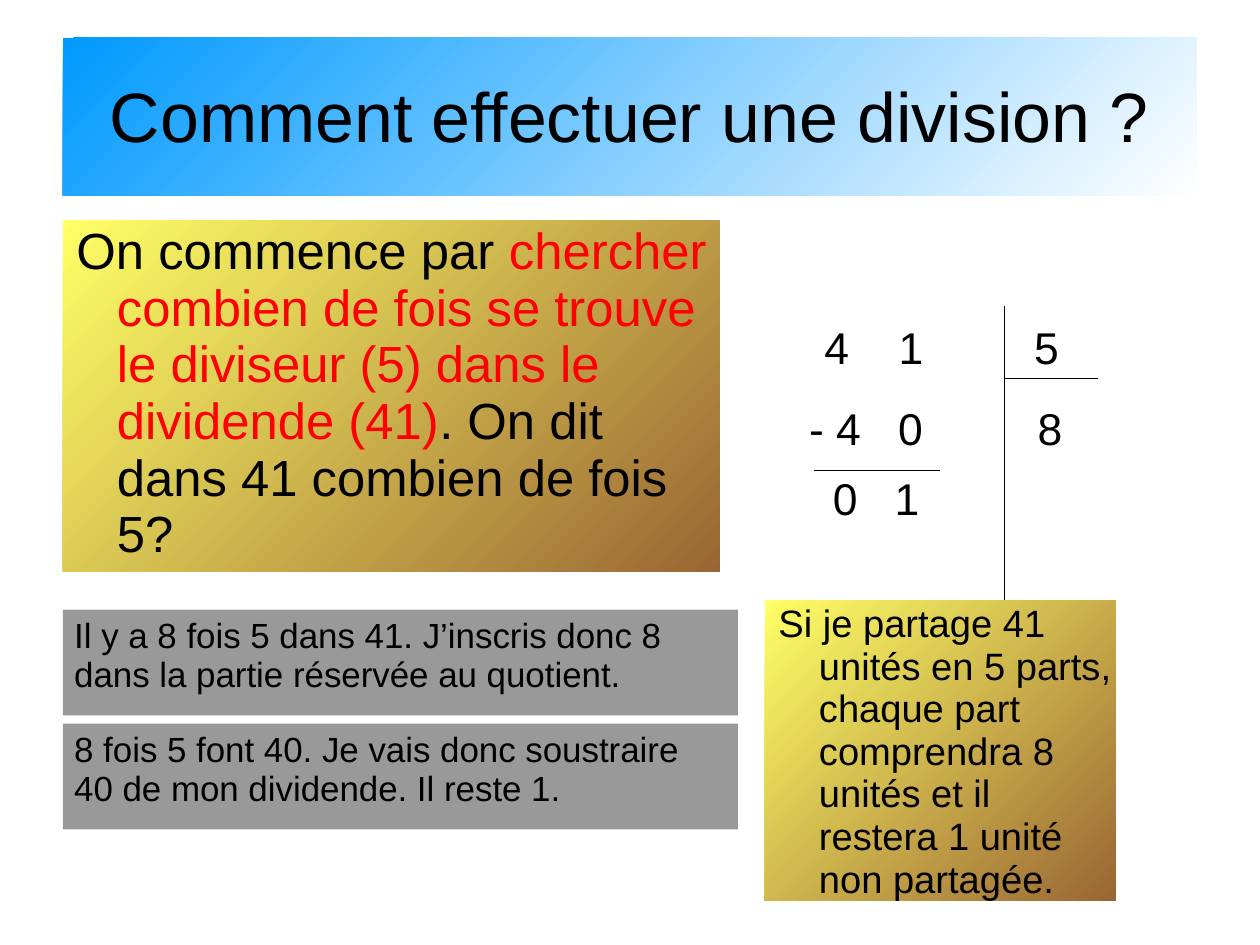
import pptx
import pptx.dml.color
import pptx.enum.shapes
import pptx.enum.text
import pptx.oxml.ns
import pptx.util
from lxml import etree

Cm = pptx.util.Cm
Pt = pptx.util.Pt
qn = pptx.oxml.ns.qn
ALIGN = pptx.enum.text.PP_ALIGN
ANCHOR = pptx.enum.text.MSO_ANCHOR

COLOURS = {
    "text": "000000",
    "key": "FF0000",
    "blue": "0099FF",
    "white": "FFFFFF",
    "yellow": "FFFF66",
    "brown": "996633",
    "grey": "999999",
}


def rgb(name):
    return pptx.dml.color.RGBColor.from_string(COLOURS[name])


def write(frame, runs, size, align=ALIGN.LEFT):
    """Write one paragraph from (text, colour) pairs."""
    frame.word_wrap = True
    paragraph = frame.paragraphs[0]
    paragraph.alignment = align
    paragraph.line_spacing = 0.93
    for words, colour in runs:
        run = paragraph.add_run()
        run.text = words
        run.font.name = "Arial"
        run.font.size = Pt(size)
        run.font.color.rgb = rgb(colour)
    return paragraph


def add_panel(slide, box, colours, runs, size, align=ALIGN.LEFT,
              anchor=ANCHOR.TOP, insets=(0, 0.08, 0, 0), hanging=False):
    """Filled rectangle with text; two colours make a diagonal gradient."""
    panel = slide.shapes.add_shape(
        pptx.enum.shapes.MSO_SHAPE.RECTANGLE, *map(Cm, box))
    panel.shadow.inherit = False
    panel.line.fill.background()
    if len(colours) == 2:
        panel.fill.gradient()
        panel.fill.gradient_angle = 315
        for stop, colour in zip(panel.fill.gradient_stops, colours):
            stop.color.rgb = rgb(colour)
    else:
        panel.fill.solid()
        panel.fill.fore_color.rgb = rgb(colours[0])

    frame = panel.text_frame
    frame.vertical_anchor = anchor
    (frame.margin_left, frame.margin_top,
     frame.margin_right, frame.margin_bottom) = map(Cm, insets)
    paragraph = write(frame, runs, size, align)
    if hanging:
        properties = paragraph._p.get_or_add_pPr()
        properties.set("marL", str(Cm(1.2)))
        properties.set("indent", str(Cm(-0.9)))


def add_digits(slide, left, top, digits, stops):
    """One row of the division, its columns set by tab stops."""
    row = slide.shapes.add_textbox(Cm(left), Cm(top), Cm(6.5), Cm(1.37))
    paragraph = write(row.text_frame, [(digits, "text")], 28)
    tabs = etree.SubElement(paragraph._p.get_or_add_pPr(), qn("a:tabLst"))
    for stop in stops:
        etree.SubElement(tabs, qn("a:tab"), pos=str(Cm(stop)), algn="l")


def add_rule(slide, *ends):
    rule = slide.shapes.add_connector(
        pptx.enum.shapes.MSO_CONNECTOR.STRAIGHT, *map(Cm, ends))
    rule.line.color.rgb = rgb("text")
    rule.line.width = Pt(0.75)
    etree.SubElement(rule._element.spPr, qn("a:effectLst"))


def main():
    deck = pptx.Presentation()
    deck.slide_width, deck.slide_height = Cm(28), Cm(21)
    slide = deck.slides.add_slide(deck.slide_layouts[6])

    # Title
    add_panel(slide, (1.4, 0.84, 25.2, 3.5), ("blue", "white"),
              [("Comment effectuer une division ?", "text")], 44,
              align=ALIGN.CENTER, anchor=ANCHOR.MIDDLE, insets=(0, 0.1, 0, 0))

    # Method
    method = [
        ("On commence par ", "text"),
        ("chercher combien de fois se trouve le diviseur (5) "
         "dans le dividende (41)", "key"),
        (". On dit dans 41 combien de fois 5?", "text"),
    ]
    add_panel(slide, (1.4, 4.9, 14.6, 7.8), ("yellow", "brown"), method, 32,
              hanging=True)

    # Worked division
    add_digits(slide, 18.07, 7.09, "4\t1\t5", (1.65, 4.66))
    add_digits(slide, 17.73, 8.89, "- 4\t0\t8", (1.98, 5.08))
    add_digits(slide, 18.26, 10.46, "0\t1", (1.37,))
    add_rule(slide, 22.33, 6.81, 22.33, 15.39)
    add_rule(slide, 22.33, 8.41, 24.41, 8.41)
    add_rule(slide, 18.08, 10.46, 20.88, 10.46)

    # Steps
    steps = [
        "Il y a 8 fois 5 dans 41. J’inscris donc 8 dans la partie "
        "réservée au quotient.",
        "8 fois 5 font 40. Je vais donc soustraire 40 de mon dividende. "
        "Il reste 1.",
    ]
    for number, step in enumerate(steps):
        add_panel(slide, (1.4, 13.55 + 2.53 * number, 15, 2.35), ("grey",),
                  [(step, "text")], 22, insets=(0.25, 0.18, 0.25, 0.13))

    # Conclusion
    conclusion = ("Si je partage 41 unités en 5 parts, chaque part comprendra "
                  "8 unités et il restera 1 unité non partagée.")
    add_panel(slide, (17, 13.34, 7.8, 6.68), ("yellow", "brown"),
              [(conclusion, "text")], 24, hanging=True)

    deck.save("out.pptx")


if __name__ == "__main__":
    main()
